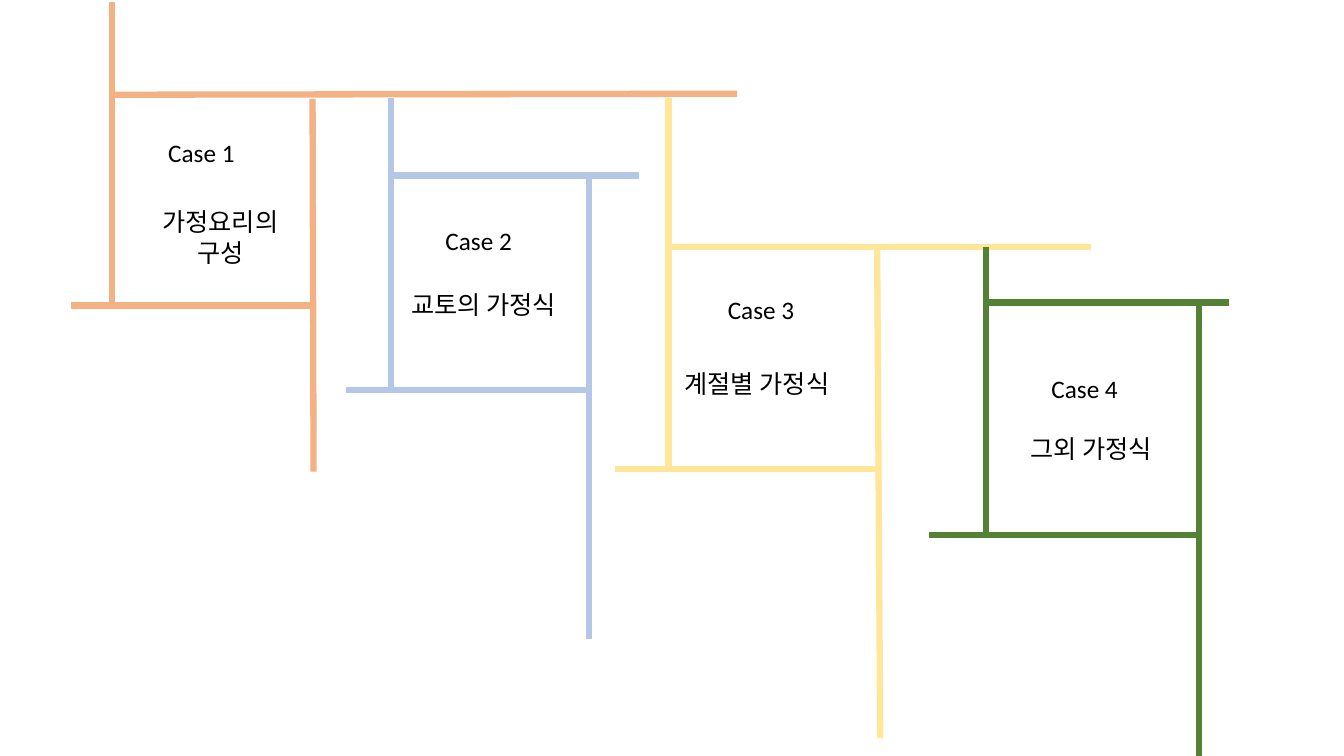
from lxml import etree
from pptx import Presentation
from pptx.dml.color import RGBColor
from pptx.enum import shapes, text
from pptx.oxml.ns import qn
from pptx.util import Inches, Pt

BLACK = RGBColor(0x00, 0x00, 0x00)
ORANGE = RGBColor(0xF4, 0xB1, 0x83)
BLUE = RGBColor(0xB4, 0xC7, 0xE7)
YELLOW = RGBColor(0xFF, 0xE6, 0x99)
GREEN = RGBColor(0x54, 0x82, 0x35)

LATIN = "Calibri"
KOREAN = "Noto Sans CJK KR"

prs = Presentation()
prs.slide_width = Inches(13.33)
prs.slide_height = Inches(7.5)
slide = prs.slides.add_slide(prs.slide_layouts[6])


def add_text(content, left, top, width, height=0.4, font=LATIN, size=18,
             align=text.PP_ALIGN.LEFT):
    sp = slide.shapes.add_textbox(Inches(left), Inches(top), Inches(width), Inches(height))
    tf = sp.text_frame
    tf.word_wrap = True
    tf.auto_size = text.MSO_AUTO_SIZE.SHAPE_TO_FIT_TEXT
    p = tf.paragraphs[0]
    p.alignment = align
    r = p.add_run()
    r.text = content
    r.font.name = font
    r.font.size = Pt(size)
    r.font.color.rgb = BLACK
    # East Asian glyphs take their font from a separate element
    etree.SubElement(r.font._element, qn("a:ea"), typeface=font)


def add_frame(color, lines):
    """Group the four crossing lines that frame one case."""
    group = slide.shapes.add_group_shape()
    for ends in lines:
        line = group.shapes.add_connector(shapes.MSO_CONNECTOR.STRAIGHT, *map(Inches, ends))
        line.line.color.rgb = color
        line.line.width = Pt(4.5)
        etree.SubElement(line._element.spPr, qn("a:effectLst"))


# Each frame: top, bottom, left and right line as x1, y1, x2, y2
frames = [
    (ORANGE, [(7.31, 0.93, 1.1, 0.94), (3.11, 3.03, 0.7, 3.03),
              (1.11, 3.03, 1.11, 0.02), (3.11, 4.68, 3.1, 0.98)]),
    (BLUE, [(6.34, 1.74, 3.91, 1.74), (5.84, 3.87, 3.43, 3.87),
            (3.88, 0.97, 3.88, 3.87), (5.84, 6.34, 5.84, 1.78)]),
    (YELLOW, [(6.63, 2.45, 10.82, 2.45), (8.74, 4.65, 6.1, 4.65),
              (6.63, 4.66, 6.63, 0.97), (8.73, 7.32, 8.7, 2.45)]),
    (GREEN, [(9.78, 3, 12.19, 3), (9.21, 5.31, 11.89, 5.31),
             (9.78, 2.45, 9.78, 5.33), (11.89, 3, 11.89, 7.5)]),
]
for color, lines in frames:
    add_frame(color, lines)

case_labels = [(1.57, 1.31), (4.32, 2.19), (7.12, 2.87), (10.33, 3.65)]
for number, (left, top) in enumerate(case_labels, start=1):
    add_text(f"Case {number}", left, top, 1.21)

add_text("가정요리의 구성", 1.35, 2, 1.67, 0.71, font=KOREAN, align=text.PP_ALIGN.CENTER)
case_topics = [
    ("교토의 가정식", 3.98, 2.82),
    ("계절별 가정식", 6.69, 3.6),
    ("그외 가정식", 10.12, 4.25),
]
for topic, left, top in case_topics:
    add_text(topic, left, top, 2.85, font=KOREAN)

prs.save("out.pptx")
